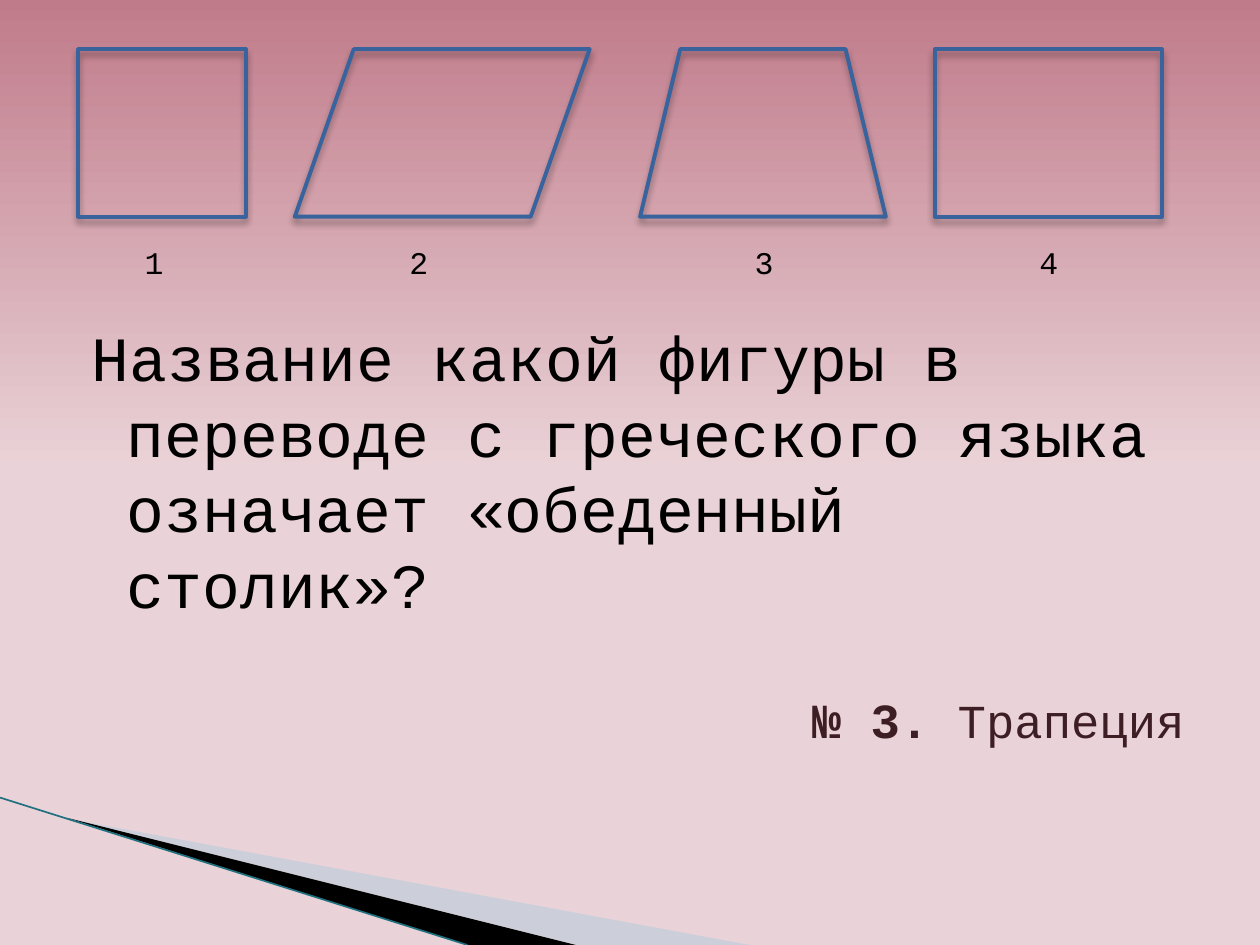
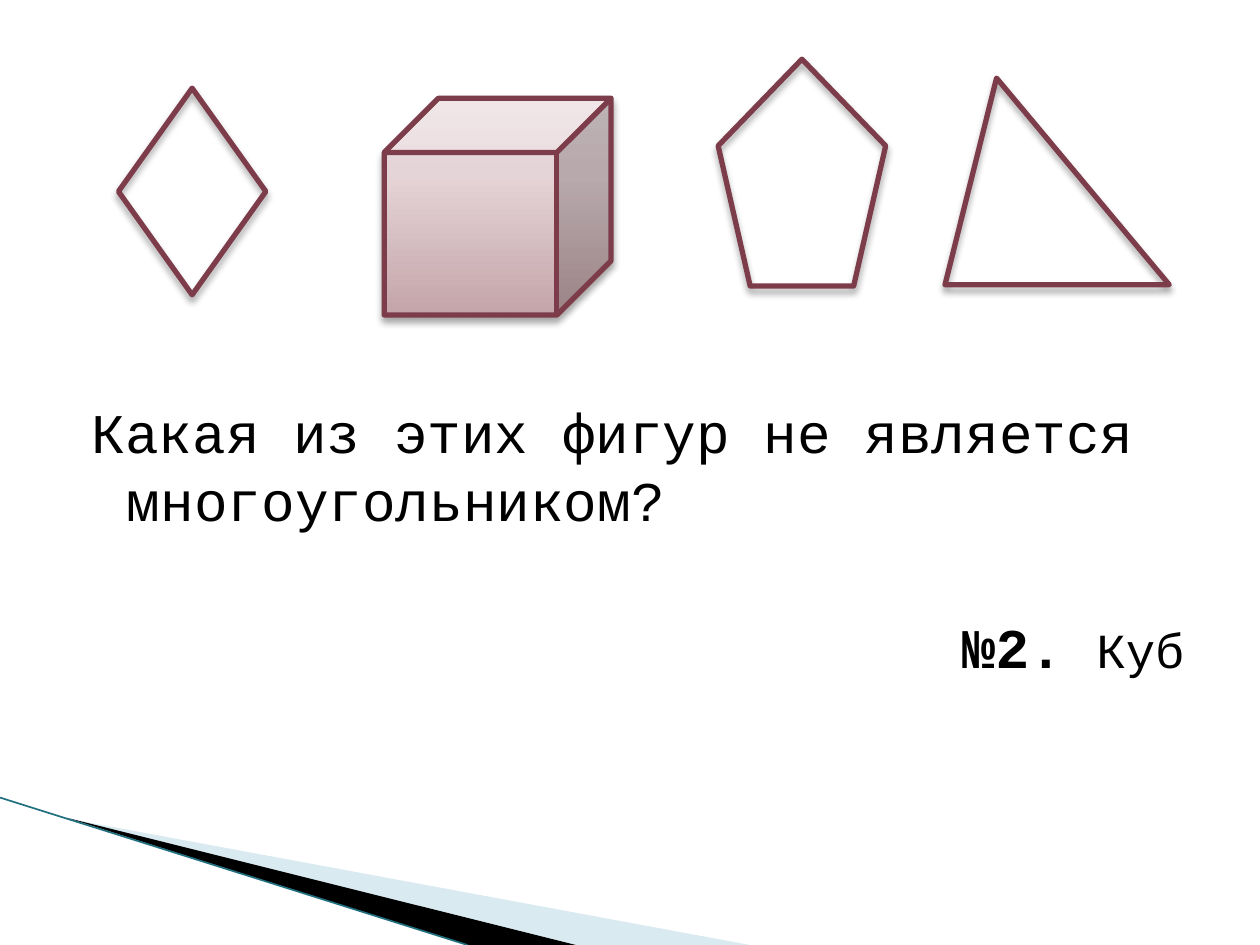
from dataclasses import dataclass

from lxml import etree
from pptx import Presentation
from pptx.dml.color import RGBColor
from pptx.enum.shapes import MSO_CONNECTOR, MSO_SHAPE
from pptx.enum.text import PP_ALIGN
from pptx.oxml.ns import qn
from pptx.util import Inches, Pt

RECT, DATA, TRAP = MSO_SHAPE.RECTANGLE, MSO_SHAPE.FLOWCHART_DATA, MSO_SHAPE.TRAPEZOID
DIAMOND, CUBE = MSO_SHAPE.DIAMOND, MSO_SHAPE.CUBE
PENTA, TRI = MSO_SHAPE.REGULAR_PENTAGON, MSO_SHAPE.ISOSCELES_TRIANGLE
LEFT, RIGHT = PP_ALIGN.LEFT, PP_ALIGN.RIGHT
STRAIGHT = MSO_CONNECTOR.STRAIGHT


@dataclass(frozen=True)
class Theme:
    font: str = "Courier New"
    black: str = "000000"
    white: str = "FFFFFF"
    blue: str = "39639D"
    wine: str = "7D3C4A"
    plum: str = "3E1E25"
    pale: str = "A0CBDC"
    teal: str = "20707F"
    rose: tuple = ((0, "C07B8A"), (50, "EAD3D8"), (100, "EAD3D8"))
    blush: tuple = ((0, "C4A5A9"), (65, "E5D4D7"), (100, "EEE0E2"))
    huge: int = 36
    large: int = 32
    mid: int = 28
    base: int = 27
    small: int = 18
    leading: float = 1.2


def rgb(code):
    return RGBColor.from_string(code)


def node(parent, tag, **attrs):
    return etree.SubElement(parent, qn(tag), {k: str(v) for k, v in attrs.items()})


def shade(fill, props, stops, angle):
    """Fill with a linear gradient; stops are (percent, colour) pairs."""
    fill.solid()
    solid = props.find(qn("a:solidFill"))
    grad = etree.Element(qn("a:gradFill"), rotWithShape="1")
    marks = node(grad, "a:gsLst")
    for pos, code in stops:
        node(node(marks, "a:gs", pos=pos * 1000), "a:srgbClr", val=code)
    node(grad, "a:lin", ang=angle * 60000, scaled=0)
    props.replace(solid, grad)


def write(para, *parts, align=LEFT, before=0, hang=False):
    """Write (text, size, colour, bold) runs into a paragraph."""
    para.alignment = align
    para.space_before = Pt(before)
    if hang:
        para.line_spacing = Pt(max(part[1] for part in parts) * Theme.leading)
        props = para._p.get_or_add_pPr()
        props.set("marL", str(Inches(0.41)))
        props.set("indent", str(Inches(-0.28)))
    for text, size, code, bold in parts:
        run = para.add_run()
        run.text = text
        font = run.font
        font.name, font.size, font.bold = Theme.font, Pt(size), bold
        font.color.rgb = rgb(code)


class Deck:
    def __init__(self, theme):
        self.theme = theme
        self.file = Presentation()
        self.file.slide_width, self.file.slide_height = Inches(10), Inches(7.5)
        self.slide = None

    def start(self, stops=None):
        self.slide = self.file.slides.add_slide(self.file.slide_layouts[6])
        fill = self.slide.background.fill
        fill.solid()
        if stops:
            shade(fill, self.slide._element.find(".//" + qn("p:bgPr")), stops, 90)
        else:
            fill.fore_color.rgb = rgb(self.theme.white)
        self.wedge([(0.55, 6.5), (5.95, 7.5), (4.56, 7.5)], self.theme.pale, 40)
        self.wedge([(0.53, 6.49), (4.57, 7.5), (3.71, 7.5)], self.theme.black)
        self.rule((0, 6.33), (3.71, 7.5), self.theme.teal)

    def wedge(self, points, code, alpha=100):
        first, *rest = [(Inches(x), Inches(y)) for x, y in points]
        pen = self.slide.shapes.build_freeform(*first)
        pen.add_line_segments(rest)
        shape = pen.convert_to_shape()
        shape.shadow.inherit = False
        shape.line.fill.background()
        shape.fill.solid()
        shape.fill.fore_color.rgb = rgb(code)
        if alpha < 100:
            tint = shape._element.spPr.find(".//" + qn("a:srgbClr"))
            node(tint, "a:alpha", val=alpha * 1000)

    def rule(self, begin, end, code):
        line = self.slide.shapes.add_connector(STRAIGHT, *map(Inches, begin + end))
        line.line.color.rgb, line.line.width = rgb(code), Pt(0.95)
        node(line._element.spPr, "a:effectLst")

    def figure(self, kind, spot, code, width, adj=None, stops=None):
        """Draw an outlined figure with a soft shadow below it."""
        shape = self.slide.shapes.add_shape(kind, *map(Inches, spot))
        props = shape._element.spPr
        if adj is not None:
            shape.adjustments[0] = adj
        if stops:
            shade(shape.fill, props, stops, 270)
        else:
            shape.fill.background()
        shape.line.color.rgb, shape.line.width = rgb(code), Pt(width)
        node(props.find(qn("a:ln")), "a:round")
        shape.shadow.inherit = False
        glow = node(props.find(qn("a:effectLst")), "a:outerShdw", blurRad=Pt(4),
                    dist=Pt(3), dir=90 * 60000, rotWithShape=0)
        node(node(glow, "a:srgbClr", val=self.theme.black), "a:alpha", val=35000)

    def box(self, spot, wrap=True):
        frame = self.slide.shapes.add_textbox(*map(Inches, spot)).text_frame
        frame.word_wrap = wrap
        return frame

    def label(self, text, left):
        para = self.box((left, 1.88, 0.36, 0.4), wrap=False).paragraphs[0]
        write(para, (text, self.theme.small, self.theme.black, False))

    def quiz(self, top, text, size, answer, gap):
        """Put a question and, right-aligned below it, its answer."""
        frame = self.box((0.5, top, 9, 6.57 - top))
        write(frame.paragraphs[0], (text, size, self.theme.black, False), hang=True)
        write(frame.add_paragraph(), *answer, align=RIGHT, before=gap, hang=True)


def main():
    look = Theme()
    deck = Deck(look)

    deck.start(look.rose)
    row = ((RECT, 0.62, 1.33, None, 1.05), (DATA, 2.34, 2.34, None, 3.15),
           (TRAP, 5.08, 1.95, 0.24, 5.89), (RECT, 7.42, 1.8, None, 8.15))
    for num, (kind, left, width, adj, mark) in enumerate(row, 1):
        deck.figure(kind, (left, 0.39, width, 1.33), look.blue, 2.25, adj)
        deck.label(str(num), mark)
    deck.quiz(2.48, "Название какой фигуры в переводе с греческого языка "
              "означает «обеденный столик»?", look.huge,
              [("№ 3.", look.mid, look.plum, True),
               (" Трапеция", look.base, look.plum, False)], 39)

    deck.start()
    row = ((DIAMOND, (0.94, 0.7, 1.17, 1.64), None, None),
           (CUBE, (3.05, 0.78, 1.8, 1.72), None, look.blush),
           (PENTA, (5.7, 0.47, 1.33, 1.8), None, None),
           (TRI, (7.5, 0.62, 1.78, 1.64), 0.23, None))
    for kind, spot, adj, stops in row:
        deck.figure(kind, spot, look.wine, 3, adj, stops)
    deck.quiz(3.11, "Какая из этих фигур не является многоугольником?", look.large,
              [("№2. ", look.large, look.black, True),
               ("Куб", look.mid, look.black, False)], 46)

    deck.file.save("out.pptx")


if __name__ == "__main__":
    main()
